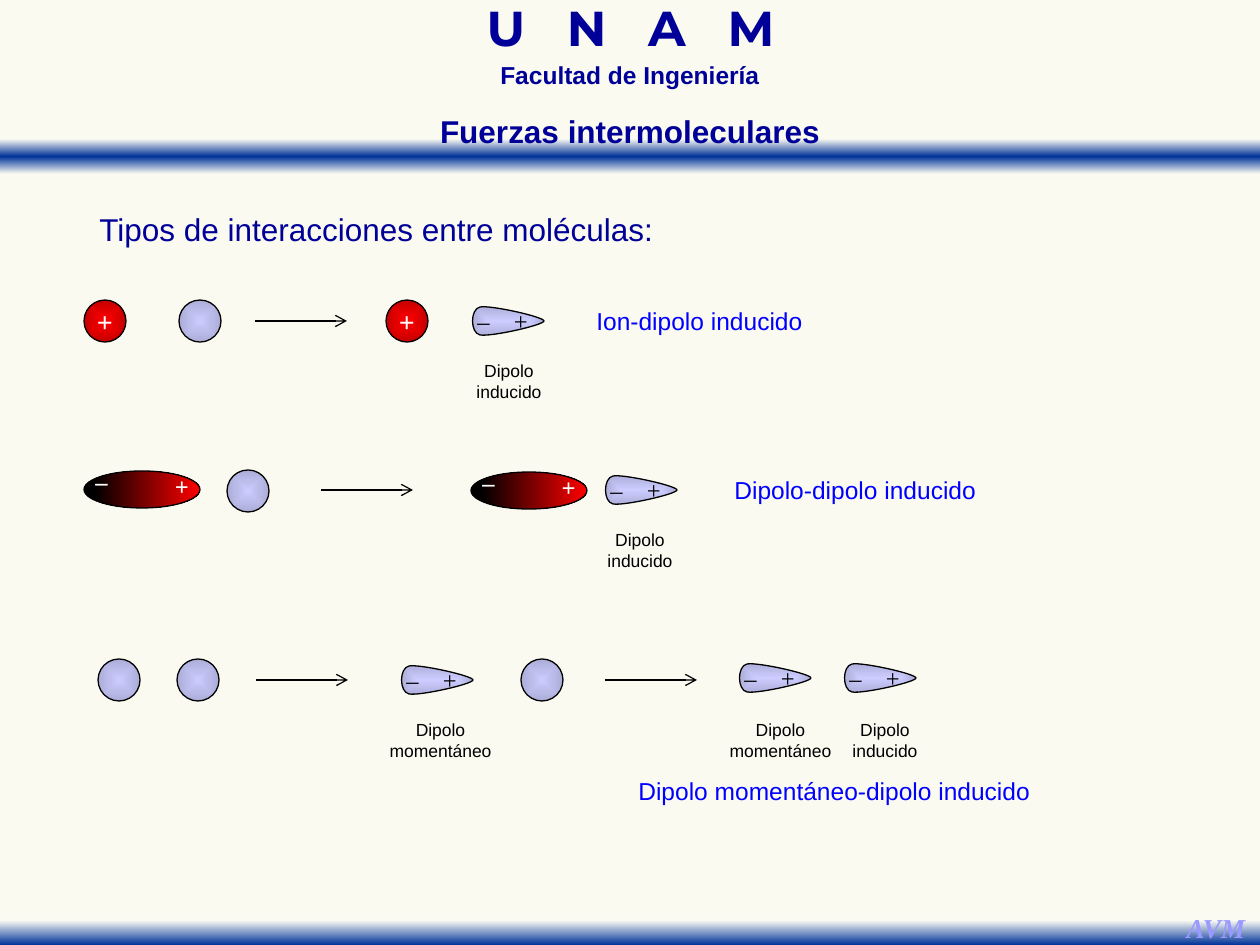
from lxml import etree
from pptx import Presentation
from pptx.dml.color import RGBColor
from pptx.enum.shapes import MSO_CONNECTOR, MSO_SHAPE
from pptx.enum.text import MSO_ANCHOR, MSO_AUTO_SIZE, PP_ALIGN
from pptx.oxml import parse_xml
from pptx.oxml.ns import nsdecls, qn
from pptx.util import Pt

PX = 914400 // 126
LEFT, CENTER, JUSTIFY = PP_ALIGN.LEFT, PP_ALIGN.CENTER, PP_ALIGN.JUSTIFY
RECTANGLE, OVAL = MSO_SHAPE.RECTANGLE, MSO_SHAPE.OVAL
MIDDLE = MSO_ANCHOR.MIDDLE

CREAM = RGBColor(0xFA, 0xFA, 0xF0)
PALE = RGBColor(0xFA, 0xFA, 0xF2)
BAND_BLUE = RGBColor(0x00, 0x33, 0x99)
NAVY = RGBColor(0x00, 0x00, 0x99)
BLUE = RGBColor(0x00, 0x00, 0xFF)
LILAC = RGBColor(0x99, 0x99, 0xFF)
BLACK = RGBColor(0x00, 0x00, 0x00)
WHITE = RGBColor(0xFF, 0xFF, 0xFF)
RED = RGBColor(0xFF, 0x00, 0x00)
ION = [(0, RED), (100, RGBColor(0xC5, 0x00, 0x00))]
NEUTRAL = [(0, RGBColor(0xCC, 0xCC, 0xFF)), (100, RGBColor(0xAC, 0xAC, 0xD7))]
SERIF = "Times New Roman"

deck = Presentation()
deck.slide_width, deck.slide_height = 1260 * PX, 945 * PX
page = deck.slides.add_slide(deck.slide_layouts[5])
page.background.fill.solid()
page.background.fill.fore_color.rgb = CREAM
shapes = page.shapes


def paint(shape, stops, angle=None, outlined=True):
    """Fill with a gradient: linear at an angle, or from the centre without one."""
    shape.shadow.inherit = False
    shape.fill.background()
    marks = "".join(f'<a:gs pos="{place * 1000}"><a:srgbClr val="{colour}"/></a:gs>'
                    for place, colour in stops)
    if angle is None:
        course = ('<a:path path="shape"><a:fillToRect l="50000" t="50000" '
                  'r="50000" b="50000"/></a:path>')
    else:
        course = f'<a:lin ang="{angle * 60000}" scaled="1"/>'
    gradient = parse_xml(f'<a:gradFill {nsdecls("a")} rotWithShape="1">'
                         f'<a:gsLst>{marks}</a:gsLst>{course}</a:gradFill>')
    properties = shape._element.spPr
    properties.replace(properties.find(qn("a:noFill")), gradient)
    if outlined:
        shape.line.color.rgb = BLACK
        shape.line.width = Pt(0.75)
    else:
        shape.line.fill.background()


def write(shape, lines, size, colour, font="Arial", align=LEFT, bold=False,
          italic=False, spacing=None, tracking=0):
    """Fill the shape's text; tracking, in points, widens all but the last letter."""
    frame = shape.text_frame
    frame.word_wrap = True
    for index, line in enumerate(lines):
        para = frame.paragraphs[0] if index == 0 else frame.add_paragraph()
        para.alignment = align
        para.line_spacing = spacing
        for part in (line[:-1], line[-1]) if tracking and len(line) > 1 else (line,):
            span = para.add_run()
            span.text = part
            span.font.size, span.font.name, span.font.color.rgb = Pt(size), font, colour
            span.font.bold, span.font.italic = bold, italic
            if tracking and len(part) > 1:
                span.font._element.set("spc", str(round(tracking * 100)))


# Header and footer
for top, height, stops in [
    (139, 35, [(0, PALE), (50, BAND_BLUE), (100, PALE)]),
    (911, 34, [(28, PALE), (100, BAND_BLUE)]),
]:
    band = shapes.add_shape(RECTANGLE, 0, top * PX, 1260 * PX, height * PX)
    paint(band, stops, 90, outlined=False)

school = shapes.add_textbox(384 * PX, 7 * PX, 493 * PX, 54 * PX)
write(school, ["U N A M"], 28, NAVY, "Montserrat", CENTER, True, spacing=0.7, tracking=8)
faculty = shapes.add_textbox(405 * PX, 62 * PX, 450 * PX, 34 * PX)
write(faculty, ["Facultad de Ingeniería"], 14, NAVY, align=CENTER, bold=True, spacing=0.7)
initials = shapes.add_textbox(1173 * PX, 905 * PX, 86 * PX, 47 * PX)
write(initials, ["AVM"], 15.6, LILAC, SERIF, CENTER, True, True)

title = shapes.title
title.left, title.top, title.width, title.height = 357 * PX, 106 * PX, 546 * PX, 50 * PX
title.text_frame.auto_size = MSO_AUTO_SIZE.NONE
title.text_frame.vertical_anchor = MSO_ANCHOR.TOP
write(title, ["Fuerzas intermoleculares"], 18, NAVY, align=CENTER, bold=True)
title._element.getparent().append(title._element)  # in front of the band

heading = shapes.add_textbox(87 * PX, 204 * PX, 682 * PX, 50 * PX)
write(heading, ["Tipos de interacciones entre moléculas:"], 18, NAVY, align=JUSTIFY)

# Ions and neutral molecules
for left, top, stops, sign in [
    (84, 300, ION, "+"), (179, 300, NEUTRAL, ""), (386, 300, ION, "+"),
    (227, 470, NEUTRAL, ""),
    (98, 659, NEUTRAL, ""), (177, 659, NEUTRAL, ""), (521, 659, NEUTRAL, ""),
]:
    ball = shapes.add_shape(OVAL, left * PX, top * PX, 42 * PX, 42 * PX)
    paint(ball, stops)
    if sign:
        write(ball, [sign], 16, WHITE, SERIF, CENTER, True)
        ball.text_frame.word_wrap = False
        ball.text_frame.vertical_anchor = MIDDLE

# Permanent dipoles, turned upside down together with their signs
for left, top in [(84, 471), (471, 472)]:
    dipole = shapes.add_shape(OVAL, left * PX, top * PX, 116 * PX, 37 * PX)
    paint(dipole, [(9, BLACK), (100, RED)], 0)
    dipole.rotation = 180
    dipole._element.spPr.find(qn("a:xfrm")).set("flipH", "1")
    write(dipole, ["+ –"], 14, WHITE, SERIF, CENTER, True, tracking=17.4)
    dipole.text_frame.word_wrap = False
    dipole.text_frame.vertical_anchor = MIDDLE

# Drop-shaped dipoles: drawn with the tip up, then turned to the right
DROP_WIDTH, DROP_HEIGHT = 32, 72
DROP_START = (2, 64)
DROP_CURVES = [
    [(4, 74), (28, 74), (30, 64)],
    [(32, 53), (20, 0), (16, 0)],
    [(12, 0), (0, 53), DROP_START],
]
for left, middle in [(472, 321), (605, 490), (401, 680), (739, 678), (844, 678)]:
    x = left + (DROP_HEIGHT - DROP_WIDTH) // 2
    y = middle - DROP_HEIGHT // 2
    builder = shapes.build_freeform(x * PX, y * PX)
    builder.add_line_segments([((x + DROP_WIDTH) * PX, (y + DROP_HEIGHT) * PX)])
    drop = builder.convert_to_shape()
    outline = next(drop._element.iter(qn("a:path")))
    for segment in list(outline):
        outline.remove(segment)
    outline.set("w", str(DROP_WIDTH))
    outline.set("h", str(DROP_HEIGHT))
    for tag, points in [("a:moveTo", [DROP_START])] + [("a:cubicBezTo", c) for c in DROP_CURVES]:
        segment = etree.SubElement(outline, qn(tag))
        for across, down in points:
            etree.SubElement(segment, qn("a:pt"), x=str(across), y=str(down))
    etree.SubElement(outline, qn("a:close"))
    paint(drop, NEUTRAL)
    drop.rotation = 90
    signs = shapes.add_textbox((left - 7) * PX, (middle - 21) * PX, 76 * PX, 42 * PX)
    write(signs, ["– +"], 14, BLACK, SERIF, tracking=5.2)
    signs.text_frame.word_wrap = False

# Arrows
for left, middle in [(255, 321), (321, 490), (256, 680), (605, 680)]:
    arrow = shapes.add_connector(MSO_CONNECTOR.STRAIGHT, left * PX, middle * PX,
                                 (left + 92) * PX, middle * PX)
    arrow.line.color.rgb = BLACK
    arrow.line.width = Pt(0.75)
    etree.SubElement(arrow.line._get_or_add_ln(), qn("a:tailEnd"), type="arrow")
    etree.SubElement(arrow._element.spPr, qn("a:effectLst"))

# Captions and interaction names
for left, top, width, kind in [
    (464, 354, 90, "inducido"), (595, 523, 90, "inducido"), (376, 713, 129, "momentáneo"),
    (716, 713, 129, "momentáneo"), (840, 713, 90, "inducido"),
]:
    caption = shapes.add_textbox(left * PX, top * PX, width * PX, 55 * PX)
    write(caption, ["Dipolo", kind], 10, BLACK, align=CENTER)
    caption.text_frame.word_wrap = False

for left, top, width, name in [
    (584, 300, 297, "Ion-dipolo inducido"),
    (722, 469, 297, "Dipolo-dipolo inducido"),
    (626, 770, 431, "Dipolo momentáneo-dipolo inducido"),
]:
    label = shapes.add_textbox(left * PX, top * PX, width * PX, 43 * PX)
    write(label, [name], 14, BLUE)

deck.save("out.pptx")
